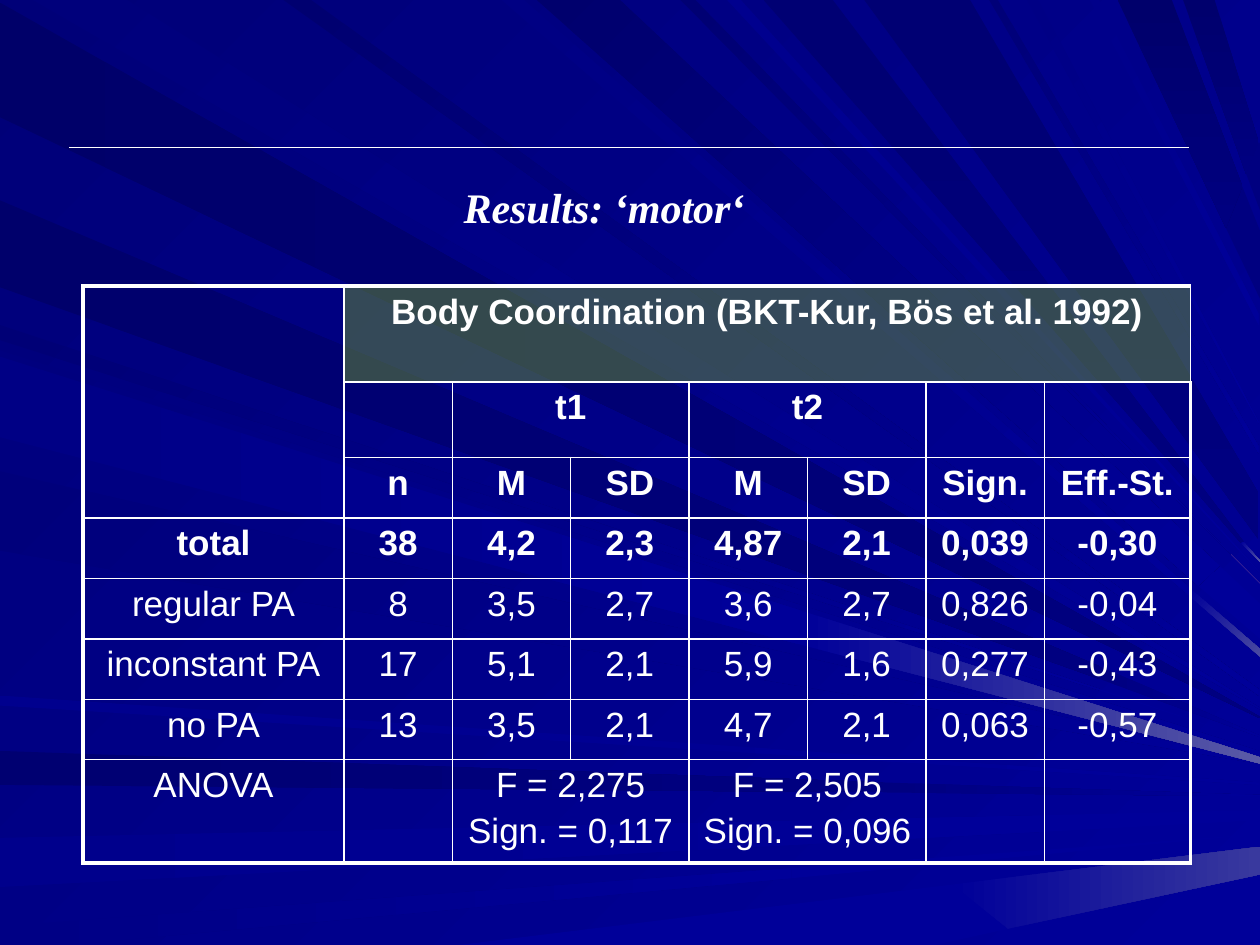
"""Build the motor results slide: a table of body coordination scores over blue rays."""
from lxml import etree
from pptx import Presentation
from pptx.dml.color import RGBColor
from pptx.enum import shapes, text
from pptx.oxml import ns
from pptx.util import Inches, Pt

C = {b: "0000" + b for b in
     "69 6B 6D 70 71 73 76 78 7B 7E 80 83 85 8A 8C 8E 99".split()}
C.update(white="FFFFFF", sage="84B818", pink="FF9999", dusk="39399E",
         haze="4A4AA1", mist="5A5AA6")

RAYS = [
    ("69", "80", 0, "5.56,3.17 0,0.02 0,0.93 5.29,3.45 10,5.7 10,5.69"),
    ("7B", "99", 45, "5.77,2.98 1.01,0 0.26,0 5.63,3.1 10,5.63 10,5.62"),
    ("71", "80", 0, "0,6.23 7.01,6.29 7.01,6.21 0,5.96"),
    ("80", "99", 0, "10,6.32 10,6.31 7.01,6.21 7.01,6.29"),
    ("8C", "99", 0, "0,7.04 8.31,6.6 8.31,6.47 0,6.65"),
    ("99", "99", 0, "10,6.51 10,6.43 8.31,6.47 8.31,6.6"),
    ("99", "99", 0, "10,6.62 6.28,6.89 6.28,6.97"),
    ("85", "99", 0, "0,7.5 0.54,7.5 6.28,6.97 6.28,6.89 0,7.35"),
    ("99", "99", 0, "7.42,7.5 8.01,7.37 7.56,7.02 3.64,7.5"),
    ("99", "dusk", 0, "10,6.94 10,6.72 7.56,7.02 8,7.37"),
    ("99", "99", 0, "10,5.89 8.73,5.47 8.73,5.48"),
    ("76", "99", 45, "0,2.7 8.73,5.48 8.73,5.47 0,2.58"),
    ("80", "99", 0, "10,5.85 10,5.84 8.73,5.29 8.73,5.39"),
    ("6B", "80", 0, "0,2.28 8.73,5.39 8.73,5.29 0,1.59"),
    ("83", "99", 45, "3.98,0 9.44,4.73 9.47,4.69 4.16,0"),
    ("99", "haze", 45, "10,5.21 10,5.15 9.47,4.69 9.44,4.73"),
    ("99", "99", 0, "10,5.07 10,4.79 9.68,4.49 9.51,4.65"),
    ("6D", "99", 45, "4.26,0 9.51,4.65 9.68,4.49 4.92,0"),
    ("pink", "pink", 0, "10,4.63 9.77,4.4 9.77,4.4"),
    ("73", "99", 45, "5.4,0 9.77,4.4 9.77,4.4 5.52,0"),
    ("73", "80", 90, "6.06,0 9.85,4.31 9.87,4.3 6.61,0"),
    ("99", "mist", 45, "10,4.46 10,4.45 9.87,4.3 9.85,4.31"),
    ("80", "80", 0, "10,2.37 10,1.83 9.86,1.48 9.73,1.81"),
    ("6B", "80", 90, "8.87,0 9.73,1.81 9.86,1.48 9.3,0"),
    ("6D", "80", 90, "9.64,0 9.39,0 9.89,1.38 9.99,1.13"),
    ("80", "80", 0, "9.89,1.38 10,1.67 10,1.14 9.99,1.13"),
    ("7E", "99", 45, "0,3.42 9.99,6.02 9.99,5.96 0,2.78"),
    ("7B", "99", 45, "0,4.37 9.99,6.06 9.99,6.05 0,3.74"),
    ("8E", "99", 0, "0,5.6 9.99,6.23 9.99,6.21 0,5.52"),
    ("70", "99", 45, "2.25,0 9.99,5.52 9.99,5.47 2.47,0"),
    ("8E", "99", 45, "5.77,0 9.99,4.54 9.99,4.53 5.88,0"),
    ("73", "80", 90, "7.7,0 6.86,0 9.99,4.28 9.99,3.9 9.98,3.9"),
    ("78", "99", 45, "7.85,0 9.99,3.6 9.99,3.54 7.92,0"),
    ("85", "99", 45, "8.15,0 9.99,3.36 9.99,3.35 8.24,0"),
    ("8A", "99", 45, "9.99,2.49 8.72,0 8.65,0 9.99,2.58"),
    ("85", "99", 0, "0,2.83 0,3.47 6.33,5.11 6.35,4.98 6.37,4.85"),
    ("99", "mist", 0, "10,6.01 6.37,4.85 6.35,4.98 6.33,5.11 10,6.06"),
]

ROWS = [
    ["", "Body Coordination (BKT-Kur, Bös et al. 1992)", "", "", "", "", "", ""],
    ["", "", "t1", "", "t2", "", "", ""],
    ["", "n", "M", "SD", "M", "SD", "Sign.", "Eff.-St."],
    ["total", "38", "4,2", "2,3", "4,87", "2,1", "0,039", "-0,30"],
    ["regular PA", "8", "3,5", "2,7", "3,6", "2,7", "0,826", "-0,04"],
    ["inconstant PA", "17", "5,1", "2,1", "5,9", "1,6", "0,277", "-0,43"],
    ["no PA", "13", "3,5", "2,1", "4,7", "2,1", "0,063", "-0,57"],
    ["ANOVA", "", "F = 2,275\nSign. = 0,117", "", "F = 2,505\nSign. = 0,096", "", "", ""],
]
WIDTHS = [2.07, 0.86] + [0.94] * 5 + [1.16]
HEIGHTS = [0.76, 0.6] + [0.48] * 5 + [0.82]
MERGES = [(0, 0, 2, 0), (0, 1, 0, 7), (1, 2, 1, 3), (1, 4, 1, 5), (7, 2, 7, 3), (7, 4, 7, 5)]


def write(tf, words, font="Arial", size=20, bold=False, italic=False):
    for i, line in enumerate(words.split("\n")):
        p = tf.add_paragraph() if i else tf.paragraphs[0]
        p.alignment = text.PP_ALIGN.CENTER
        p.space_before = Pt(4 if i else 0)
        r = p.add_run()
        r.text = line
        r.font.name, r.font.size = font, Pt(size)
        r.font.bold, r.font.italic = bold, italic
        r.font.color.rgb = RGBColor.from_string(C["white"])


def paint(fill, start, end, angle):
    if start == end:
        fill.solid()
        fill.fore_color.rgb = RGBColor.from_string(C[start])
        return
    fill.gradient()
    fill.gradient_angle = -angle % 360
    for stop, name in zip(fill.gradient_stops, (start, end)):
        stop.color.rgb = RGBColor.from_string(C[name])


prs = Presentation()
prs.slide_width, prs.slide_height = Inches(10), Inches(7.5)
s = prs.slides.add_slide(prs.slide_layouts[6])
paint(s.background.fill, "78", "99", 45)

for start, end, angle, outline in RAYS:
    pts = [tuple(Inches(float(v)) for v in pt.split(",")) for pt in outline.split()]
    fb = s.shapes.build_freeform(*pts[0])
    fb.add_line_segments(pts[1:], close=True)
    sp = fb.convert_to_shape()
    sp.shadow.inherit = False
    sp.line.fill.background()
    paint(sp.fill, start, end, angle)

rule = s.shapes.add_connector(shapes.MSO_CONNECTOR.STRAIGHT, Inches(0.55), Inches(1.17),
                              Inches(9.44), Inches(1.17))
rule.line.color.rgb = RGBColor.from_string(C["white"])
rule.line.width = Pt(0.5)
etree.SubElement(rule._element.spPr, ns.qn("a:effectLst"))

tbl = s.shapes.add_table(len(ROWS), len(WIDTHS), Inches(0.66), Inches(2.27),
                         Inches(sum(WIDTHS)), Inches(sum(HEIGHTS))).table
tbl.first_row = tbl.horz_banding = False
for col, w in zip(tbl.columns, WIDTHS):
    col.width = Inches(w)
for row, h in zip(tbl.rows, HEIGHTS):
    row.height = Inches(h)
for top, left, bottom, right in MERGES:
    tbl.cell(top, left).merge(tbl.cell(bottom, right))

for i, row in enumerate(ROWS):
    for j, words in enumerate(row):
        cell = tbl.cell(i, j)
        tcPr = cell._tc.get_or_add_tcPr()
        outer = {"lnL": j == 0, "lnR": j == len(row) - 1,
                 "lnT": i == 0, "lnB": i == len(ROWS) - 1}
        for side, thick in outer.items():
            ln = etree.SubElement(tcPr, ns.qn("a:" + side), w=str(Pt(2.25 if thick else 1)))
            solid = etree.SubElement(ln, ns.qn("a:solidFill"))
            etree.SubElement(solid, ns.qn("a:srgbClr"), val=C["white"])
        cell.fill.background()
        if words:
            write(cell.text_frame, words, bold=i < 4)

head = tbl.cell(0, 1)
paint(head.fill, "sage", "sage", 0)
clr = head._tc.tcPr.find(ns.qn("a:solidFill")).find(ns.qn("a:srgbClr"))
etree.SubElement(clr, ns.qn("a:alpha"), val="40000")

tf = s.shapes.add_textbox(Inches(3.58), Inches(1.39), Inches(2.43), Inches(0.5)).text_frame
tf.word_wrap = False
tf.auto_size = text.MSO_AUTO_SIZE.SHAPE_TO_FIT_TEXT
write(tf, "Results: ‘motor‘", font="Times New Roman", size=24, bold=True, italic=True)

prs.save("out.pptx")
